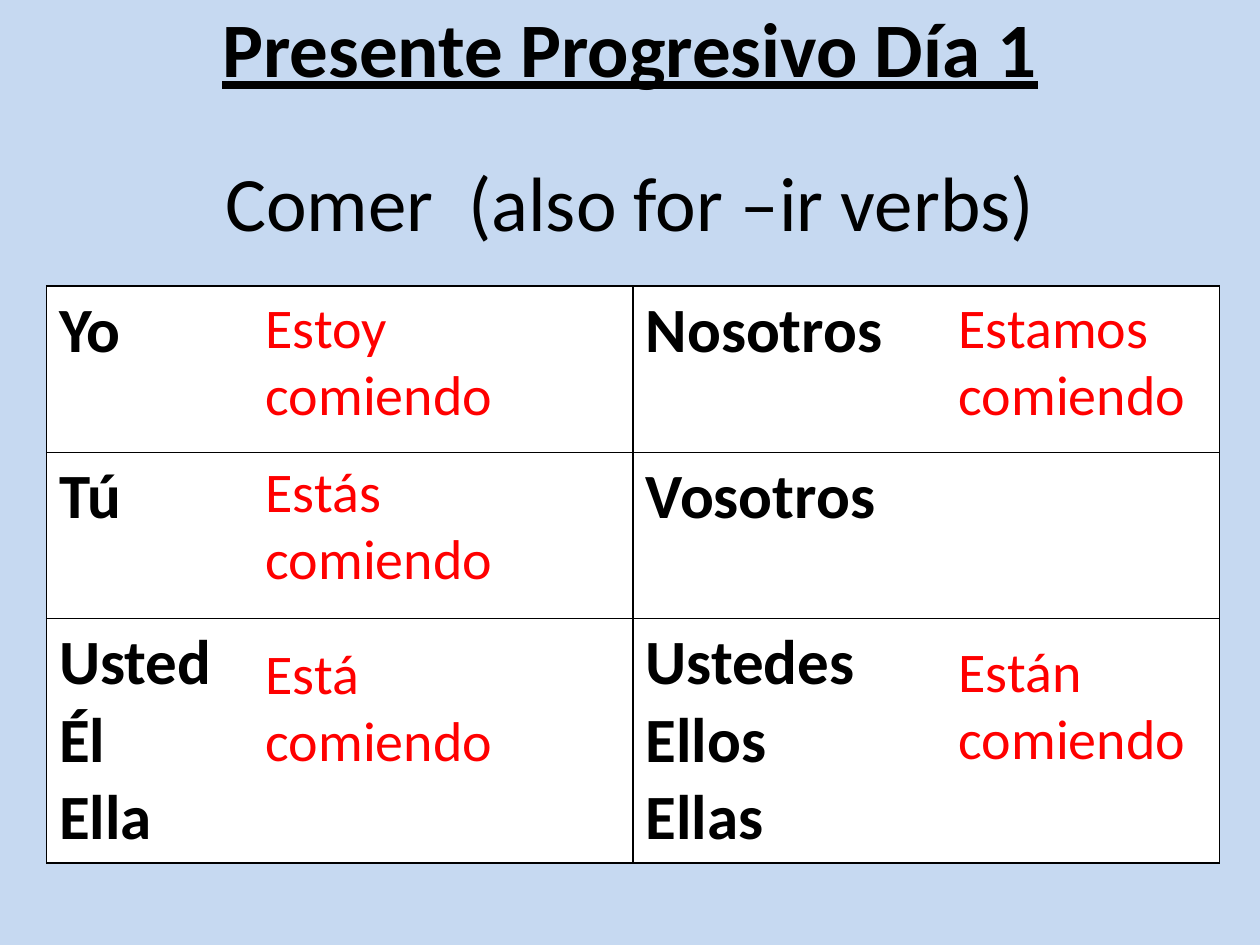
import pptx
import pptx.util
import pptx.dml.color
import pptx.enum.text
import pptx.oxml
import pptx.oxml.ns

FONT = "Calibri"
BLACK, RED, WHITE, PALE_BLUE = "000000", "FF0000", "FFFFFF", "C6D9F1"
WIDTH, HEIGHT = 10, 7.5

PRONOUNS = [
    ["Yo", "Nosotros"],
    ["Tú", "Vosotros"],
    ["Usted\nÉl\nElla", "Ustedes\nEllos\nEllas"],
]
ROW_HEIGHTS = [1.32, 1.32, 1.94]
TABLE_BOX = (0.37, 2.27, 9.31, sum(ROW_HEIGHTS))

# Each column of answers: left, width, then (top, text) for each answer
ANSWER_COLUMNS = [
    (2.01, 2.74, [(2.27, "Estoy comiendo"), (3.57, "Estás comiendo"), (5.02, "Está comiendo")]),
    (7.51, 2.17, [(2.27, "Estamos comiendo"), (5, "Están comiendo")]),
]


def paint(colour_target, value):
    colour_target.rgb = pptx.dml.color.RGBColor.from_string(value)


def fill_solid(fill, value):
    fill.solid()
    paint(fill.fore_color, value)


def inches(box):
    return [pptx.util.Inches(length) for length in box]


def write(text_frame, text, size, colour, bold=False, underline=False, alignment=None):
    text_frame.text = text
    for paragraph in text_frame.paragraphs:
        paragraph.alignment = alignment
        paragraph.space_before = pptx.util.Pt(0)
        for run in paragraph.runs:
            run.font.name = FONT
            run.font.size = pptx.util.Pt(size)
            run.font.bold = bold
            run.font.underline = underline
            paint(run.font.color, colour)


def place_heading(placeholder, box, text, **style):
    placeholder.left, placeholder.top, placeholder.width, placeholder.height = inches(box)
    text_frame = placeholder.text_frame
    text_frame.word_wrap = True
    text_frame.auto_size = pptx.enum.text.MSO_AUTO_SIZE.NONE
    text_frame.vertical_anchor = pptx.enum.text.MSO_ANCHOR.MIDDLE
    write(text_frame, text, 44, BLACK, alignment=pptx.enum.text.PP_ALIGN.CENTER, **style)


def add_borders(cell, colour, points):
    properties = cell._tc.get_or_add_tcPr()
    for position, side in enumerate(("lnL", "lnR", "lnT", "lnB")):
        line = pptx.oxml.parse_xml(
            f'<a:{side} {pptx.oxml.ns.nsdecls("a")} w="{pptx.util.Pt(points)}">'
            f'<a:solidFill><a:srgbClr val="{colour}"/></a:solidFill></a:{side}>'
        )
        properties.insert(position, line)


def add_pronoun_table(slide, box):
    table = slide.shapes.add_table(len(PRONOUNS), len(PRONOUNS[0]), *inches(box)).table
    table.first_row = table.horz_banding = False
    for row, height, names in zip(table.rows, ROW_HEIGHTS, PRONOUNS):
        row.height = pptx.util.Inches(height)
        for cell, name in zip(row.cells, names):
            write(cell.text_frame, name, 36, BLACK, bold=True)
            fill_solid(cell.fill, WHITE)
            add_borders(cell, BLACK, 1)


def add_answers(slide, left, width, answers):
    for top, text in answers:
        text_box = slide.shapes.add_textbox(*inches((left, top, width, 1.18)))
        text_box.text_frame.word_wrap = True
        write(text_box.text_frame, text, 32, RED)


def main():
    presentation = pptx.Presentation()
    presentation.slide_width, presentation.slide_height = inches((WIDTH, HEIGHT))
    slide = presentation.slides.add_slide(presentation.slide_layouts[0])
    fill_solid(slide.background.fill, PALE_BLUE)

    title, subtitle = slide.placeholders
    place_heading(title, (0, -0.31, WIDTH, 1.36), "Presente Progresivo Día 1", bold=True, underline=True)
    place_heading(subtitle, (0, 0.91, WIDTH, 1.36), "Comer  (also for –ir verbs)")
    add_pronoun_table(slide, TABLE_BOX)
    for left, width, answers in ANSWER_COLUMNS:
        add_answers(slide, left, width, answers)
    presentation.save("out.pptx")


if __name__ == "__main__":
    main()
